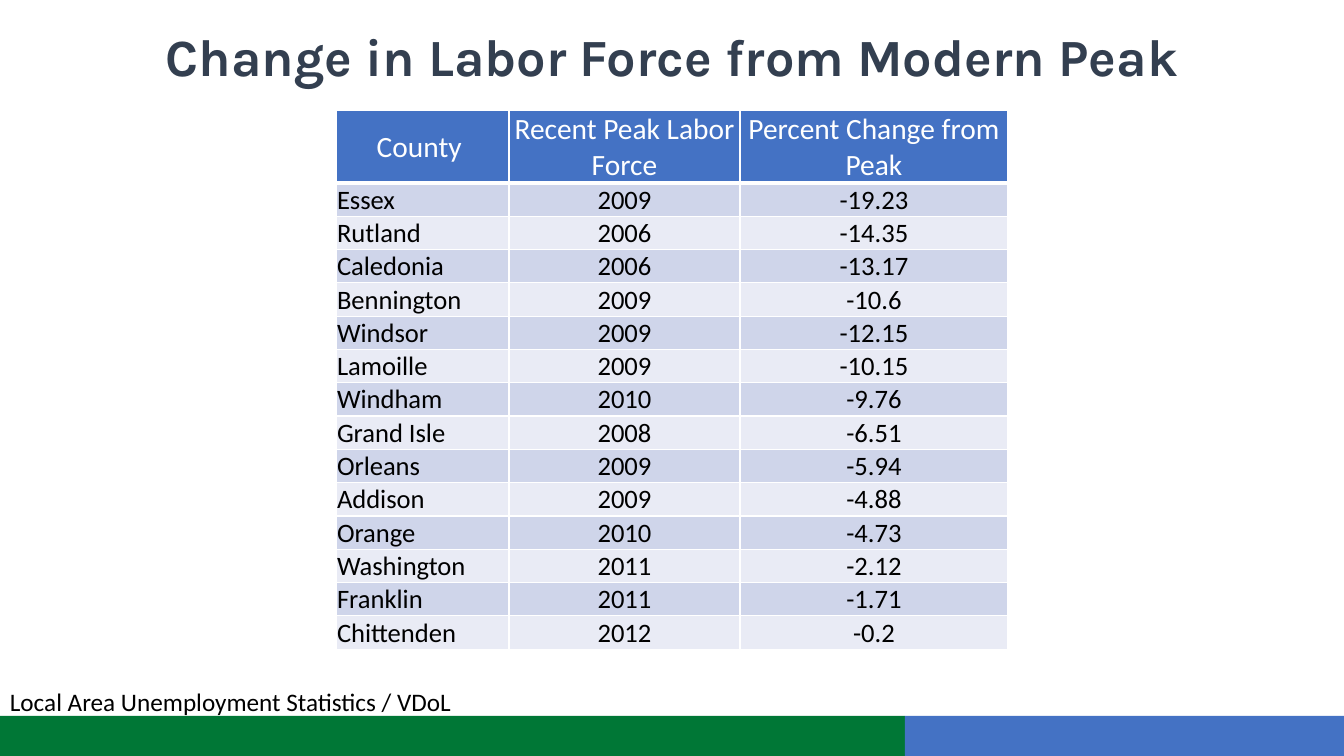
"""Build the slide on county labor force change from the modern peak."""
from lxml.etree import SubElement
from pptx import Presentation
from pptx.dml.color import RGBColor
from pptx.enum.shapes import MSO_SHAPE
from pptx.enum.text import MSO_ANCHOR, PP_ALIGN
from pptx.oxml.ns import qn
from pptx.util import Pt

PX = 914400 / 100.8
WHITE = RGBColor(0xFF, 0xFF, 0xFF)
BLACK = RGBColor(0x00, 0x00, 0x00)
SLATE = RGBColor(0x33, 0x3F, 0x50)
GREEN = RGBColor(0x00, 0x77, 0x36)
BLUE = RGBColor(0x44, 0x72, 0xC4)
BAND_DARK = RGBColor(0xCF, 0xD5, 0xEA)
BAND_LIGHT = RGBColor(0xE9, 0xEB, 0xF5)

HEADINGS = ("County ", "Recent Peak Labor Force", "Percent Change from Peak")
COUNTIES = [
    ("Essex", "2009", "-19.23"),
    ("Rutland", "2006", "-14.35"),
    ("Caledonia", "2006", "-13.17"),
    ("Bennington", "2009", "-10.6"),
    ("Windsor", "2009", "-12.15"),
    ("Lamoille", "2009", "-10.15"),
    ("Windham", "2010", "-9.76"),
    ("Grand Isle", "2008", "-6.51"),
    ("Orleans", "2009", "-5.94"),
    ("Addison", "2009", "-4.88"),
    ("Orange", "2010", "-4.73"),
    ("Washington", "2011", "-2.12"),
    ("Franklin", "2011", "-1.71"),
    ("Chittenden", "2012", "-0.2"),
]
COLUMN_WIDTHS = (173, 231, 268)
HEADER_HEIGHT = 73
ROW_HEIGHT = 33


def px(*lengths):
    """Turn pixel lengths into a list of EMU lengths."""
    return [round(length * PX) for length in lengths]


def write(para, text, font, size, color, bold=False):
    """Add one formatted run to a paragraph."""
    span = para.add_run()
    span.text = text
    span.font.name = font
    span.font.size = Pt(size)
    span.font.bold = bold
    span.font.color.rgb = color


deck = Presentation()
deck.slide_width, deck.slide_height = px(1344, 756)
page = deck.slides.add_slide(deck.slide_layouts[5])

for left, width, color in ((0, 905, GREEN), (905, 439, BLUE)):
    bar = page.shapes.add_shape(MSO_SHAPE.RECTANGLE, *px(left, 716, width, 40))
    bar.shadow.inherit = False
    bar.fill.solid()
    bar.fill.fore_color.rgb = color
    bar.line.fill.background()

title = page.shapes.title
title.left, title.top, title.width, title.height = px(67, 0, 1210, 120)
title.text_frame.vertical_anchor = MSO_ANCHOR.MIDDLE
para = title.text_frame.paragraphs[0]
para.alignment = PP_ALIGN.CENTER
para.line_spacing = 0.9
write(para, "Change in Labor Force from Modern Peak", "Karla", 37.3, SLATE, True)

rows = [HEADINGS, *COUNTIES]
table_height = HEADER_HEIGHT + ROW_HEIGHT * len(COUNTIES)
frame = page.shapes.add_table(
    len(rows), len(HEADINGS), *px(336, 110, sum(COLUMN_WIDTHS), table_height))
table = frame.table
for column, width in zip(table.columns, COLUMN_WIDTHS):
    column.width = px(width)[0]

for row_index, values in enumerate(rows):
    header = row_index == 0
    table.rows[row_index].height = px(HEADER_HEIGHT if header else ROW_HEIGHT)[0]
    band = BLUE if header else BAND_DARK if row_index % 2 else BAND_LIGHT
    for column_index, value in enumerate(values):
        cell = table.cell(row_index, column_index)
        cell.margin_left, cell.margin_top, cell.margin_right, cell.margin_bottom = px(1, 1, 1, 0)
        cell.vertical_anchor = MSO_ANCHOR.MIDDLE if header else MSO_ANCHOR.BOTTOM
        properties = cell._tc.get_or_add_tcPr()
        for side in ("lnL", "lnR", "lnT", "lnB"):
            thick = header and side == "lnB"
            border = SubElement(properties, qn(f"a:{side}"), w=str(Pt(3 if thick else 1)))
            paint = SubElement(border, qn("a:solidFill"))
            SubElement(paint, qn("a:srgbClr"), val=str(WHITE))
        cell.fill.solid()
        cell.fill.fore_color.rgb = band
        para = cell.text_frame.paragraphs[0]
        centered = header or column_index > 0
        para.alignment = PP_ALIGN.CENTER if centered else PP_ALIGN.LEFT
        write(para, value, "Calibri", 21 if header else 19, WHITE if header else BLACK)

box = page.shapes.add_textbox(*px(0, 681, 589, 40))
box.text_frame.word_wrap = True
write(box.text_frame.paragraphs[0], "Local Area Unemployment Statistics / VDoL", "Calibri", 18, BLACK)

deck.save("out.pptx")
